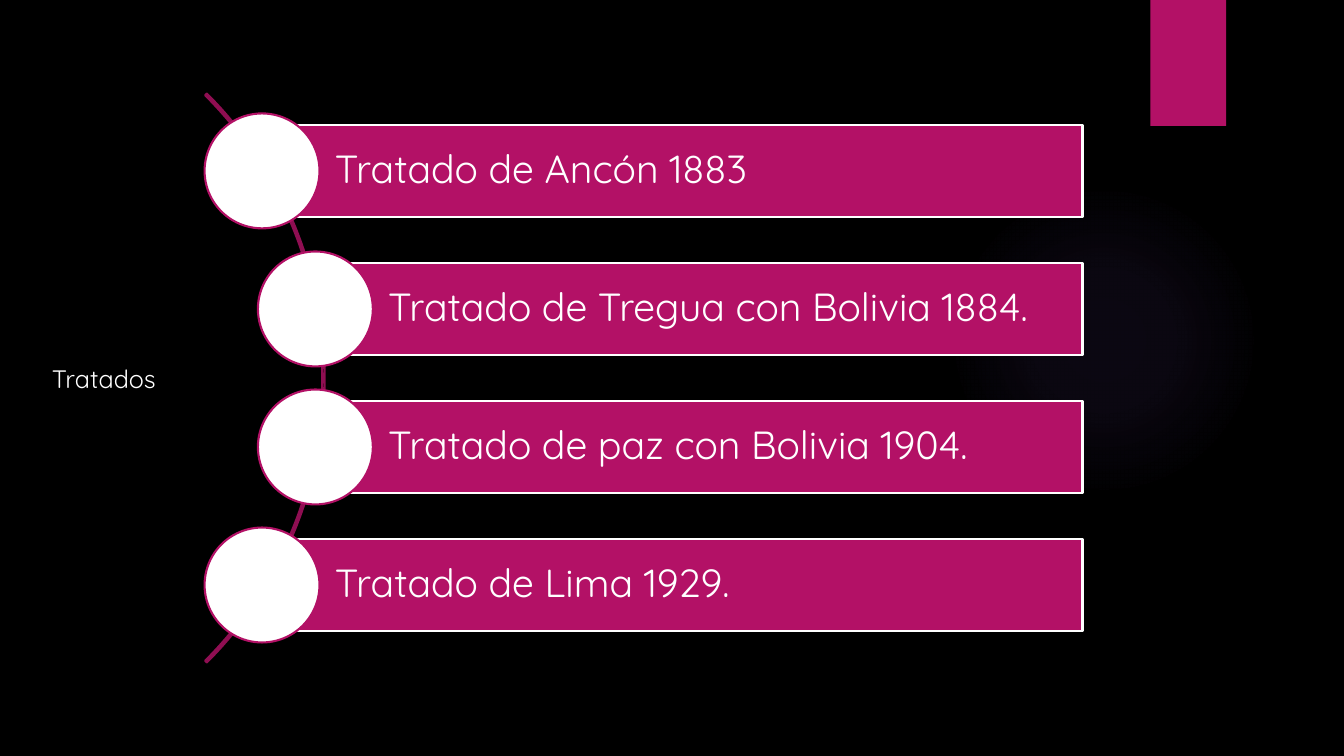
from lxml.etree import SubElement
from pptx import Presentation
from pptx.dml.color import RGBColor
from pptx.enum.shapes import MSO_SHAPE
from pptx.enum.text import MSO_ANCHOR, MSO_AUTO_SIZE, PP_ALIGN
from pptx.oxml.ns import qn
from pptx.util import Pt

# Content: each treaty with the left edge of its bar
HEADING = "Tratados"
OUTER, INNER = 187.2, 225.3
TREATIES = [
    ("Tratado de Ancón 1883", OUTER),
    ("Tratado de Tregua con Bolivia 1884.", INNER),
    ("Tratado de paz con Bolivia 1904.", INNER),
    ("Tratado de Lima 1929.", OUTER),
]

FONT = "Quicksand"
BLACK = RGBColor(0x00, 0x00, 0x00)
WHITE = RGBColor(0xFF, 0xFF, 0xFF)
MAGENTA = RGBColor(0xB3, 0x11, 0x66)
PLUM = RGBColor(0x8F, 0x0E, 0x52)
VIOLET = RGBColor(0x9B, 0x6B, 0xF2)
GLOW_STOPS = [(0, 7), (36, 6), (69, 0)]  # position and opacity, percent

# Layout, in points
WIDTH, HEIGHT = 960, 540
MIDDLE = HEIGHT / 2
BAR_RIGHT, BAR_HEIGHT, BAR_PITCH = 773.3, 65.7, 98.6
CIRCLE = 82.1
ARC_LEFT, ARC_SIZE = -342.7, 574.6

prs = Presentation()
prs.slide_width, prs.slide_height = Pt(WIDTH), Pt(HEIGHT)
slide = prs.slides.add_slide(prs.slide_layouts[5])
slide.background.fill.solid()
slide.background.fill.fore_color.rgb = BLACK


def write(shape, text, size, margins, anchor, spacing=1.0):
    frame = shape.text_frame
    frame.word_wrap = True
    frame.auto_size = MSO_AUTO_SIZE.NONE
    frame.vertical_anchor = anchor
    (frame.margin_left, frame.margin_top,
     frame.margin_right, frame.margin_bottom) = map(Pt, margins)
    frame.text = text
    paragraph = frame.paragraphs[0]
    paragraph.alignment = PP_ALIGN.LEFT
    paragraph.line_spacing = spacing
    paragraph.space_before = Pt(0)
    font = paragraph.runs[0].font
    font.name, font.size, font.bold = FONT, Pt(size), False
    font.color.rgb = WHITE


def draw(kind, left, top, width, height, fill=None, line=None):
    shape = slide.shapes.add_shape(kind, Pt(left), Pt(top), Pt(width), Pt(height))
    shape.shadow.inherit = False
    if fill is None:
        shape.fill.background()
    else:
        shape.fill.solid()
        shape.fill.fore_color.rgb = fill
    if line is None:
        shape.line.fill.background()
    else:
        shape.line.color.rgb = line
        shape.line.width = Pt(1.5)
    return shape


# Soft radial glow
glow = draw(MSO_SHAPE.OVAL, 677.5, 131.8, 221.8, 221.8)
properties = glow.element.spPr
properties.remove(properties.find(qn("a:noFill")))
gradient = SubElement(properties, qn("a:gradFill"), rotWithShape="1")
properties.find(qn("a:prstGeom")).addnext(gradient)
stops = SubElement(gradient, qn("a:gsLst"))
for position, opacity in GLOW_STOPS:
    stop = SubElement(stops, qn("a:gs"), pos=str(position * 1000))
    color = SubElement(stop, qn("a:srgbClr"), val=str(VIOLET))
    SubElement(color, qn("a:alpha"), val=str(opacity * 1000))
radial = SubElement(gradient, qn("a:path"), path="circle")
SubElement(radial, qn("a:fillToRect"), l="50000", t="50000", r="50000", b="50000")

# Corner tab
draw(MSO_SHAPE.RECTANGLE, 821.8, 0, 54, 90, fill=MAGENTA)

# Arc from 315 to 45 degrees, linking the circles
arc = draw(MSO_SHAPE.BLOCK_ARC, ARC_LEFT, MIDDLE - ARC_SIZE / 2,
           ARC_SIZE, ARC_SIZE, line=PLUM)
for index, value in enumerate((189, 27, 0.003)):
    arc.adjustments[index] = value

# Treaty bars, each with a circle centred on its left edge
for row, (treaty, left) in enumerate(TREATIES):
    center = MIDDLE + (row - (len(TREATIES) - 1) / 2) * BAR_PITCH
    bar = draw(MSO_SHAPE.RECTANGLE, left, center - BAR_HEIGHT / 2,
               BAR_RIGHT - left, BAR_HEIGHT, fill=MAGENTA, line=WHITE)
    write(bar, treaty, size=28, margins=(52, 5.6, 5.6, 5.6),
          anchor=MSO_ANCHOR.MIDDLE, spacing=0.9)
    draw(MSO_SHAPE.OVAL, left - CIRCLE / 2, center - CIRCLE / 2,
         CIRCLE, CIRCLE, fill=WHITE, line=MAGENTA)

# Heading
heading = slide.shapes.title
heading.left, heading.top = Pt(29.8), Pt(255.6)
heading.width, heading.height = Pt(190), Pt(29)
write(heading, HEADING, size=18, margins=(7.2, 3.6, 7.2, 3.6), anchor=MSO_ANCHOR.TOP)

prs.save("out.pptx")
